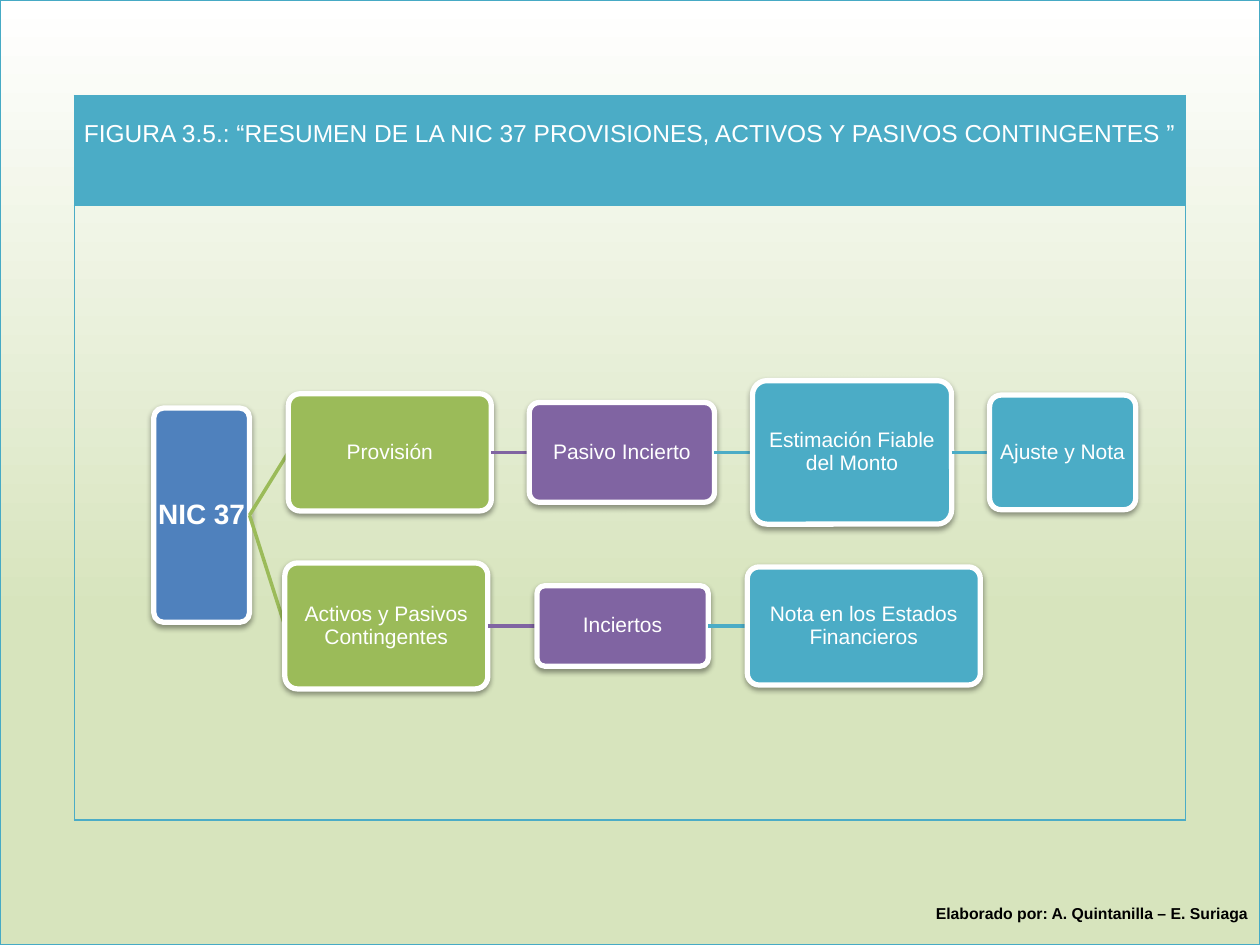
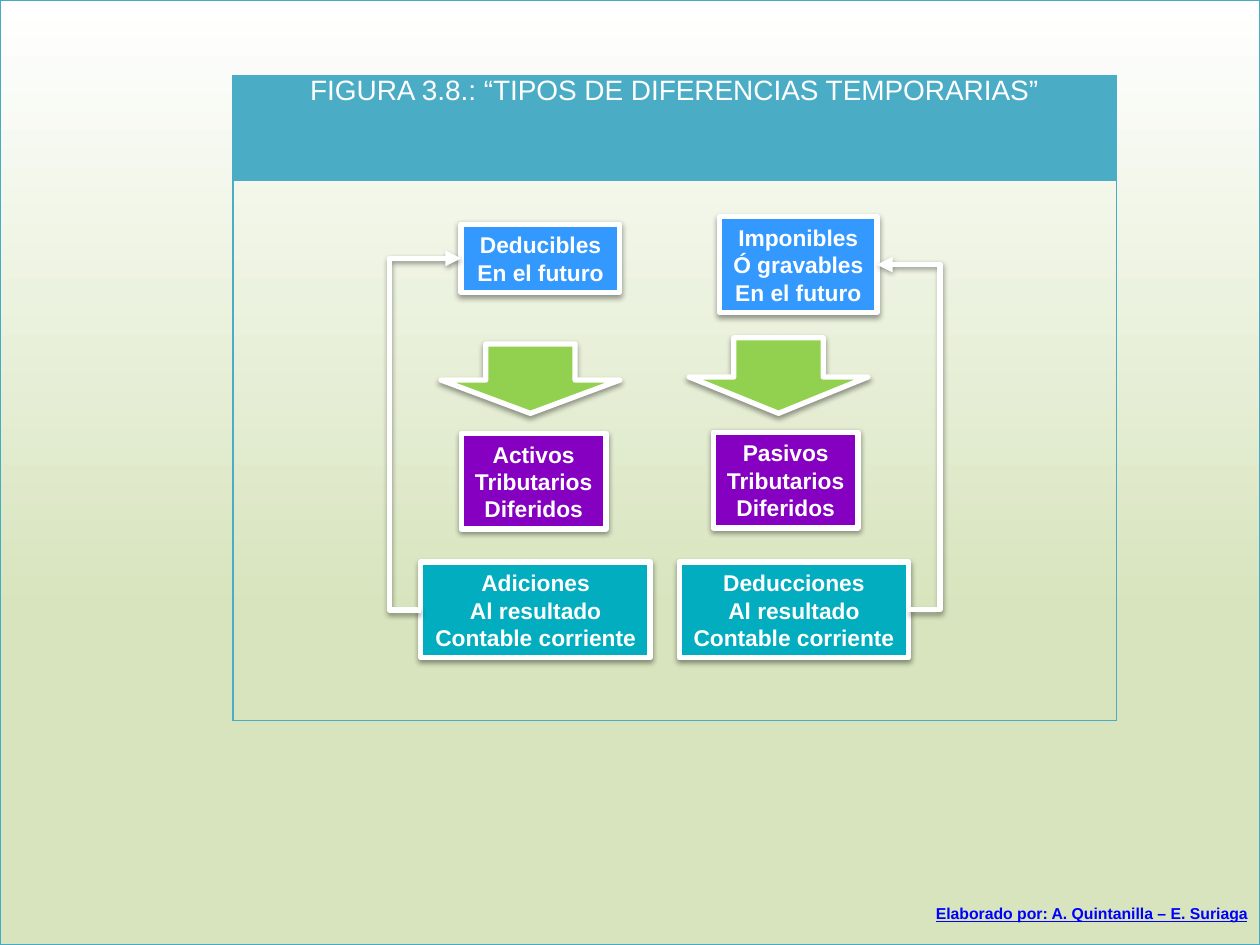
from pptx import Presentation
from pptx.dml.color import RGBColor
from pptx.enum.shapes import MSO_CONNECTOR, MSO_SHAPE
from pptx.enum.text import MSO_ANCHOR, PP_ALIGN
from pptx.oxml import parse_xml
from pptx.oxml.ns import nsdecls, qn
from pptx.util import Pt

RECT, ROUND, ARROW = MSO_SHAPE.RECTANGLE, MSO_SHAPE.ROUNDED_RECTANGLE, MSO_SHAPE.DOWN_ARROW
STRAIGHT, ELBOW = MSO_CONNECTOR.STRAIGHT, MSO_CONNECTOR.ELBOW
CENTER, RIGHT = PP_ALIGN.CENTER, PP_ALIGN.RIGHT
MIDDLE = MSO_ANCHOR.MIDDLE
LEFT_SIDE, RIGHT_SIDE = 1, 3

FONT = "Arial"
WIDTH, HEIGHT = 720, 540
WHITE, BLACK, LINK = "FFFFFF", "000000", "0000FF"
PALE_GREEN, FRAME = "D7E4BD", "46AAC5"
BLUE, GREEN, PURPLE, TEAL = "4F81BD", "9BBB59", "8064A2", "4BACC6"
SKY, VIOLET, LIME, AQUA = "3399FF", "8500C0", "92D050", "01ADBF"
CREDIT = "Elaborado por: A. Quintanilla – E. Suriaga"


def rgb(value):
    return RGBColor.from_string(value)


def points(*values):
    return [Pt(v) for v in values]


def add_effects(shape, shadow=True):
    """Give the shape the soft lower shadow, or an empty effect list."""
    inner = (
        '<a:outerShdw blurRad="40000" dist="20000" dir="5400000" rotWithShape="0">'
        f'<a:srgbClr val="{BLACK}"><a:alpha val="38000"/></a:srgbClr></a:outerShdw>'
    ) if shadow else ""
    xml = f'<a:effectLst {nsdecls("a")}>{inner}</a:effectLst>'
    shape.element.spPr.append(parse_xml(xml))


def write(tf, text, size=12, color=WHITE, bold=False, underline=None,
          align=CENTER, spacing=None):
    """Write each line of the text as a paragraph."""
    for i, line in enumerate(text.split("\n")):
        p = tf.paragraphs[0] if i == 0 else tf.add_paragraph()
        p.alignment = align
        p.line_spacing = spacing
        r = p.add_run()
        r.text = line
        r.font.name, r.font.size = FONT, Pt(size)
        r.font.bold, r.font.underline = bold, underline
        r.font.color.rgb = rgb(color)


def add_box(slide, kind, box, fill, text="", margin=None, wrap=True, **fmt):
    sp = slide.shapes.add_shape(kind, *points(*box))
    sp.fill.solid()
    sp.fill.fore_color.rgb = rgb(fill)
    sp.line.color.rgb = rgb(WHITE)
    sp.line.width = Pt(3)
    add_effects(sp)
    if text:
        tf = sp.text_frame
        tf.word_wrap = wrap
        tf.vertical_anchor = MIDDLE
        if margin is not None:
            tf.margin_left = tf.margin_right = Pt(margin)
            tf.margin_top = tf.margin_bottom = Pt(margin)
        write(tf, text, **fmt)
    return sp


def add_line(slide, kind, color, width, shadow=False):
    """Add a connector whose ends are joined later."""
    line = slide.shapes.add_connector(kind, 0, 0, 0, 0)
    line.line.color.rgb = rgb(color)
    line.line.width = Pt(width)
    add_effects(line, shadow)
    return line


def add_background(slide):
    sp = slide.shapes.add_shape(RECT, 0, 0, *points(WIDTH, HEIGHT))
    sp.fill.gradient()
    sp.fill.gradient_angle = 90
    for stop, color, position in zip(sp.fill.gradient_stops, (PALE_GREEN, WHITE), (0.35, 1)):
        stop.color.rgb = rgb(color)
        stop.position = position
    sp.line.color.rgb = rgb(FRAME)
    sp.line.width = Pt(0.75)
    add_effects(sp)


def add_credit(slide, **fmt):
    tf = slide.shapes.add_textbox(*points(525, 512.7, 195, 18)).text_frame
    tf.word_wrap = False
    tf.vertical_anchor = MIDDLE
    write(tf, CREDIT, size=9, bold=True, align=RIGHT, **fmt)


def add_borders(cell):
    for i, side in enumerate(("lnL", "lnR", "lnT", "lnB")):
        cell.fill._xPr.insert(i, parse_xml(
            f'<a:{side} {nsdecls("a")} w="12700"><a:solidFill>'
            f'<a:srgbClr val="{TEAL}"/></a:solidFill></a:{side}>'))


def add_figure_table(slide, box, header_height, title, size, margin_top=0):
    """Add a titled header cell above an open body cell."""
    table = slide.shapes.add_table(2, 1, *points(*box)).table
    table.first_row = table.horz_banding = False
    table.rows[0].height, table.rows[1].height = points(header_height, box[3] - header_height)
    header, body = table.cell(0, 0), table.cell(1, 0)
    header.fill.solid()
    header.fill.fore_color.rgb = rgb(TEAL)
    header.margin_left = header.margin_right = Pt(5)
    header.margin_top, header.margin_bottom = points(margin_top, 0)
    write(header.text_frame, title, size=size)
    body.fill.background()
    for cell in (header, body):
        add_borders(cell)


def add_chain(slide, root, left, center, steps):
    """Add boxes along one centre line, each linked to the one before."""
    previous = root
    for text, gap, width, height, color in steps:
        left += gap
        line = add_line(slide, STRAIGHT, color, 2)
        sp = add_box(slide, ROUND, (left, center - height / 2, width, height), color,
                     text, margin=0.7, spacing=0.9)
        sp.adjustments[0] = 0.1
        line.begin_connect(previous, RIGHT_SIDE)
        line.end_connect(sp, LEFT_SIDE)
        previous = sp
        left += width


def add_summary_tree(slide, box):
    x, y = box[:2]
    root = add_box(slide, ROUND, (x + 45.4, y + 178.5, 54.7, 122.4), BLUE, "NIC 37",
                   margin=0.7, size=16, bold=True, spacing=0.9)
    root.adjustments[0] = 0.1
    branches = (
        (203.8, (("Provisión", 22.2, 116, 67, GREEN),
                 ("Pasivo Incierto", 21.7, 105.8, 57, PURPLE),
                 ("Estimación Fiable del Monto", 21.7, 113.8, 82, TEAL),
                 ("Ajuste y Nota", 21.7, 83.5, 65.5, TEAL))),
        (303, (("Activos y Pasivos Contingentes", 20.2, 116, 72, GREEN),
               ("Inciertos", 28, 98, 46, PURPLE),
               ("Nota en los Estados Financieros", 22.2, 133.2, 67.5, TEAL))),
    )
    for center, steps in branches:
        add_chain(slide, root, x + 100.1, y + center, steps)


def add_return_arrow(slide, source, target, side):
    """Link two boxes on the same side, passing 18 points outside the source."""
    line = add_line(slide, ELBOW, WHITE, 3, shadow=True)
    line.begin_connect(source, side)
    line.end_connect(target, side)
    bend = round(-Pt(18) / line.width * 100000)
    geometry = line.element.spPr.find(qn("a:prstGeom"))
    geometry.get_or_add_avLst().append(parse_xml(
        f'<a:gd {nsdecls("a")} name="adj1" fmla="val {bend}"/>'))
    ln = line.line._get_or_add_ln()
    ln.append(parse_xml(f'<a:tailEnd {nsdecls("a")} type="triangle"/>'))


def add_difference_column(slide, box, boxes, arrow, side):
    """Stack the difference, its deferred tax and its adjustment."""
    x, y = box[:2]
    added = [add_box(slide, RECT, (x + left, y + top, width, height), color, text,
                     wrap=False, size=13, bold=True)
             for text, left, top, width, height, color in boxes]
    left, top, width, height = arrow
    sp = add_box(slide, ARROW, (x + left, y + top, width, height), LIME)
    sp.adjustments[0], sp.adjustments[1] = 0.5, 0.48
    add_return_arrow(slide, added[-1], added[0], side)


def build_summary_slide(slide):
    box = (42.5, 54.7, 635, 414)
    add_background(slide)
    add_figure_table(
        slide, box, 62.7,
        "FIGURA 3.5.: “RESUMEN DE LA NIC 37 PROVISIONES, ACTIVOS Y PASIVOS CONTINGENTES ”",
        14, margin_top=13.8)
    add_summary_tree(slide, box)
    add_credit(slide, color=BLACK)


def build_differences_slide(slide):
    box = (133.2, 43.2, 504.7, 368.6)
    add_background(slide)
    add_figure_table(slide, box, 60, "FIGURA 3.8.: “TIPOS DE DIFERENCIAS TEMPORARIAS”", 16)
    add_difference_column(slide, box, (
        ("Deducibles\nEn el futuro", 130.3, 85, 90.7, 38.9, SKY),
        ("Activos\nTributarios\nDiferidos", 130.3, 204.5, 82.8, 54.7, VIOLET),
        ("Adiciones\nAl resultado\nContable corriente", 107.3, 278, 131, 54.7, AQUA),
    ), (118.8, 153.4, 102.2, 39.6), LEFT_SIDE)
    add_difference_column(slide, box, (
        ("Imponibles\nÓ gravables\nEn el futuro", 277.9, 80.7, 90, 54.7, SKY),
        ("Pasivos\nTributarios\nDiferidos", 274.3, 203.8, 82.8, 54.7, VIOLET),
        ("Deducciones\nAl resultado\nContable corriente", 254.9, 278, 131, 54.7, AQUA),
    ), (260.6, 149.8, 102.2, 43.2), RIGHT_SIDE)
    add_credit(slide, color=LINK, underline=True)


def main():
    prs = Presentation()
    prs.slide_width, prs.slide_height = points(WIDTH, HEIGHT)
    blank = prs.slide_layouts[6]
    for build in (build_summary_slide, build_differences_slide):
        build(prs.slides.add_slide(blank))
    prs.save("out.pptx")


if __name__ == "__main__":
    main()
